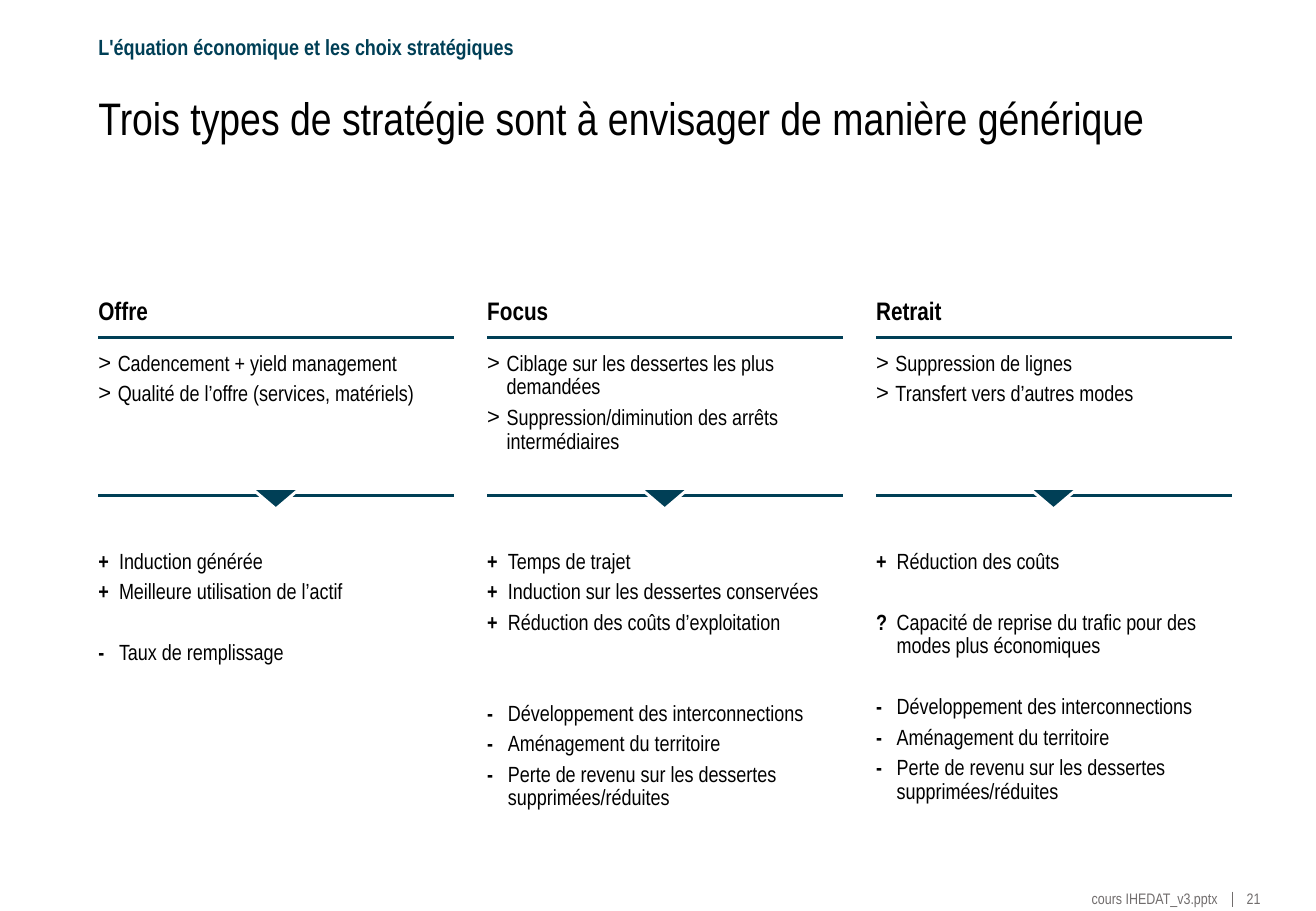
from lxml.etree import SubElement
from pptx import Presentation
from pptx.dml.color import RGBColor
from pptx.enum.shapes import MSO_CONNECTOR, MSO_SHAPE
from pptx.enum.text import MSO_ANCHOR, PP_ALIGN
from pptx.oxml.ns import qn
from pptx.util import Inches, Pt

FONT = "Arial Narrow"
BLACK, NAVY, GREY, WHITE = "000000", "003F56", "716D6D", "FFFFFF"
LEFT, COLUMN_WIDTH, COLUMN_STEP = 0.81, 2.93, 3.2
BODY_SIZE = 13
GAP = 4         # points between paragraphs
LINE_GAP = 18   # points for each line left open between groups

# Heading, actions, then effects as (sign, text, open lines before)
STRATEGIES = [
    ("Offre",
     ["Cadencement + yield management",
      "Qualité de l’offre (services, matériels)"],
     [("+", "Induction générée", 0),
      ("+", "Meilleure utilisation de l’actif", 0),
      ("-", "Taux de remplissage", 1)]),
    ("Focus",
     ["Ciblage sur les dessertes les plus demandées",
      "Suppression/diminution des arrêts intermédiaires"],
     [("+", "Temps de trajet", 0),
      ("+", "Induction sur les dessertes conservées", 0),
      ("+", "Réduction des coûts d’exploitation", 0),
      ("-", "Développement des interconnections", 2),
      ("-", "Aménagement du territoire", 0),
      ("-", "Perte de revenu sur les dessertes supprimées/réduites", 0)]),
    ("Retrait",
     ["Suppression de lignes",
      "Transfert vers d’autres modes"],
     [("+", "Réduction des coûts", 0),
      ("?", "Capacité de reprise du trafic pour des modes plus économiques", 1),
      ("-", "Développement des interconnections", 1),
      ("-", "Aménagement du territoire", 0),
      ("-", "Perte de revenu sur les dessertes supprimées/réduites", 0)]),
]


def color(value):
    return RGBColor.from_string(value)


def add_box(page, left, top, width, height, anchor=MSO_ANCHOR.TOP,
            inset_top=0, inset_bottom=0, wrap=True):
    box = page.shapes.add_textbox(Inches(left), Inches(top), Inches(width), Inches(height))
    frame = box.text_frame
    frame.margin_left = frame.margin_right = 0
    frame.margin_top, frame.margin_bottom = Inches(inset_top), Inches(inset_bottom)
    frame.vertical_anchor = anchor
    frame.word_wrap = wrap
    return frame


def add_para(frame, index=0, space=GAP, hanging=0, bullet=None):
    para = frame.add_paragraph() if index else frame.paragraphs[0]
    properties = para._p.get_or_add_pPr()
    if hanging:
        properties.set("marL", str(Inches(hanging)))
        properties.set("indent", str(-Inches(hanging)))
    if bullet:
        SubElement(properties, qn("a:buFont")).set("typeface", "Arial")
        SubElement(properties, qn("a:buChar")).set("char", bullet)
    para.line_spacing = 0.9
    if index:
        para.space_before = Pt(space)
    return para


def add_span(para, text, size=BODY_SIZE, shade=BLACK, bold=False):
    span = para.add_run()
    span.text = text
    span.font.name = FONT
    span.font.size = Pt(size)
    span.font.bold = bold
    span.font.color.rgb = color(shade)


def add_rule(page, start, end, shade=NAVY, weight=1.75):
    rule = page.shapes.add_connector(
        MSO_CONNECTOR.STRAIGHT, *(Inches(value) for value in start + end))
    rule.line.color.rgb = color(shade)
    rule.line.width = Pt(weight)
    SubElement(rule._element.spPr, qn("a:effectLst"))


def add_pointer(page, left, top):
    pointer = page.shapes.add_shape(MSO_SHAPE.ISOSCELES_TRIANGLE, Inches(left),
                                    Inches(top), Inches(0.4), Inches(0.17))
    pointer.rotation = 180
    pointer.shadow.inherit = False
    pointer.fill.solid()
    pointer.fill.fore_color.rgb = color(NAVY)
    pointer.line.color.rgb = color(WHITE)
    pointer.line.width = Pt(1.75)


def add_strategy(page, left, heading, actions, effects):
    right = left + COLUMN_WIDTH

    # Heading over its rule
    frame = add_box(page, left, 2.45, COLUMN_WIDTH, 0.31, MSO_ANCHOR.BOTTOM, inset_bottom=0.08)
    add_span(add_para(frame), heading, 15, bold=True)
    add_rule(page, (left, 2.78), (right, 2.78))

    # Actions
    frame = add_box(page, left, 2.78, COLUMN_WIDTH, 0.96, inset_top=0.12)
    for index, action in enumerate(actions):
        add_span(add_para(frame, index, hanging=0.16, bullet=">"), action)

    # Divider pointing down
    add_rule(page, (left, 4.08), (right, 4.08))
    add_pointer(page, left + 1.26, 4.02)

    # Effects
    frame = add_box(page, left, 4.41, COLUMN_WIDTH, 2.28, inset_top=0.12)
    for index, (sign, effect, open_lines) in enumerate(effects):
        para = add_para(frame, index, GAP + LINE_GAP * open_lines, hanging=0.17)
        add_span(para, sign + "\t", bold=True)
        add_span(para, effect)


def add_footer(page):
    para = add_para(add_box(page, 8.96, 7.34, 1.06, 0.14, wrap=False))
    para.alignment = PP_ALIGN.RIGHT
    add_span(para, "cours IHEDAT_v3.pptx", 9, GREY)
    add_rule(page, (10.14, 7.34), (10.14, 7.47), GREY, 0.75)
    add_span(add_para(add_box(page, 10.26, 7.34, 0.13, 0.14, wrap=False)), "21", 9, GREY)


def main():
    deck = Presentation()
    deck.slide_width, deck.slide_height = Inches(10.83), Inches(7.5)
    page = deck.slides.add_slide(deck.slide_layouts[6])

    # Section name and title
    frame = add_box(page, LEFT, 0.3, 3.45, 0.2, MSO_ANCHOR.MIDDLE, wrap=False)
    add_span(add_para(frame), "L'équation économique et les choix stratégiques",
             shade=NAVY, bold=True)
    frame = add_box(page, LEFT, 0.79, 9.34, 0.82)
    add_span(add_para(frame),
             "Trois types de stratégie sont à envisager de manière générique", 27)

    # One column for each strategy
    for column, strategy in enumerate(STRATEGIES):
        add_strategy(page, LEFT + column * COLUMN_STEP, *strategy)

    add_footer(page)
    deck.save("out.pptx")


if __name__ == "__main__":
    main()
